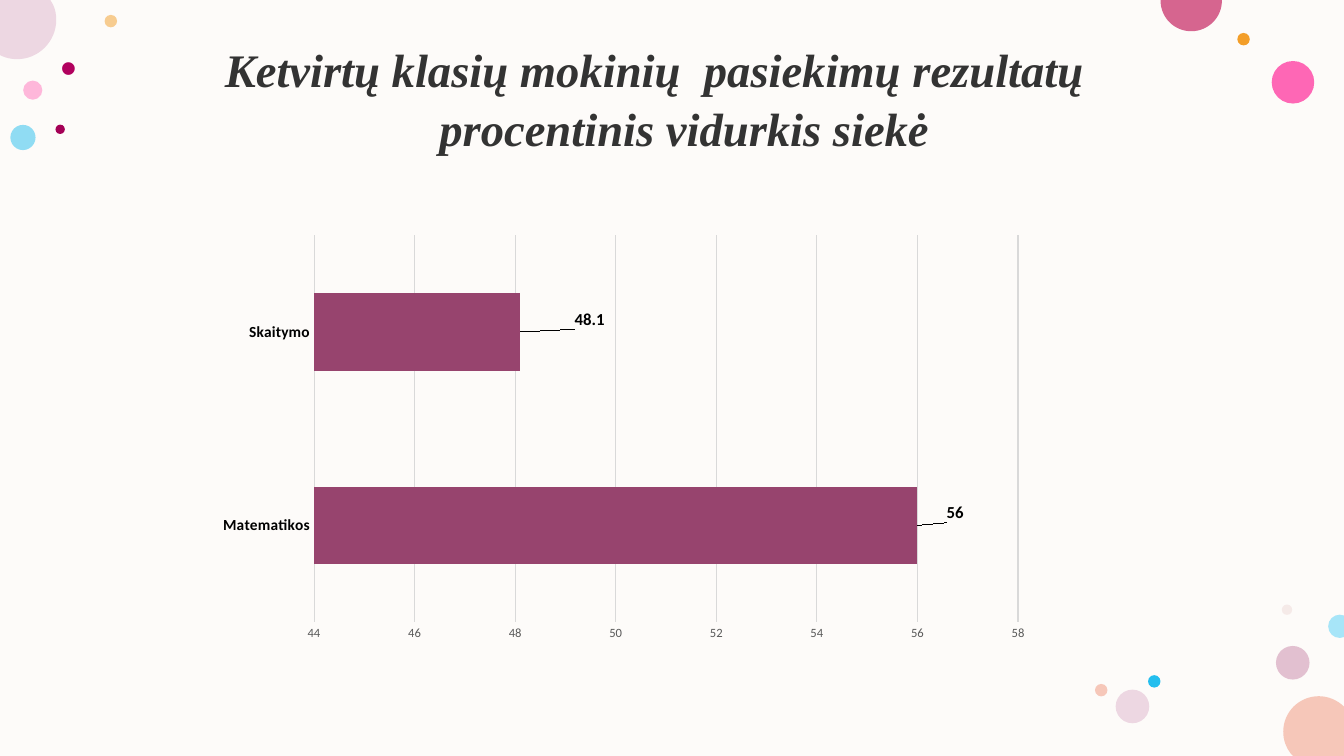
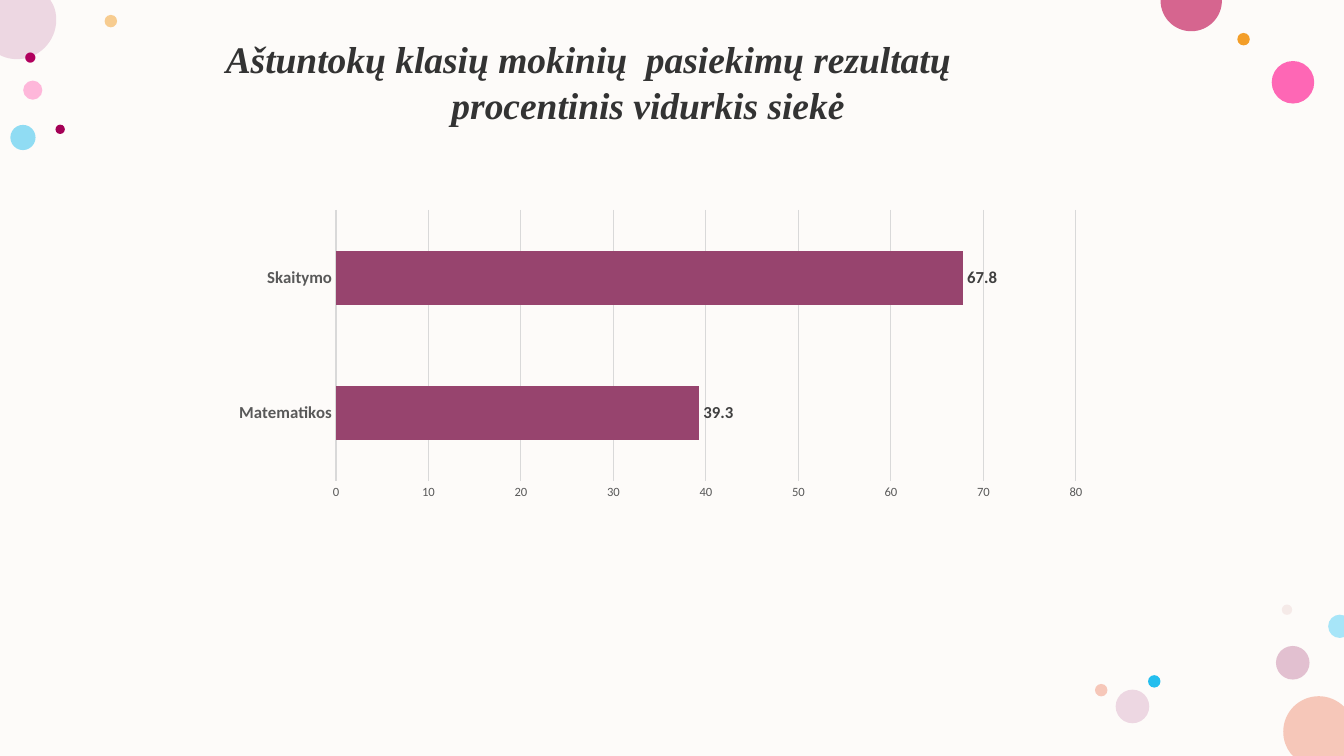
from lxml import etree
from pptx import Presentation
from pptx.chart.data import CategoryChartData
from pptx.dml.color import RGBColor
from pptx.enum import chart as ch, shapes, text
from pptx.oxml import parse_xml
from pptx.oxml.ns import nsdecls, qn
from pptx.util import Pt

WIDE, HIGH = 960, 540
PAPER, INK, BAR, GRID, AXIS, BULLET = "FDFBF9", "333333", "97446E", "D9D9D9", "595959", "B1005E"
SERIF, SANS = "Times New Roman", "Calibri"

# centre x, centre y, diameter, colour, opacity in percent
DOTS = [
    (23.4, 64.4, 13.7, "FF75BD", 50),
    (79.2, 15.1, 8.9, "F39E29", 50),
    (923.4, 473.4, 24, "C987A8", 50),
    (16.4, 98.2, 18, "24BEEE", 50),
    (923.6, 58.8, 30.4, "FF2F9C", 72),
    (888.3, 28, 8.9, "F39E29", 100),
    (919.3, 435.5, 7.4, "E3BEBE", 28),
    (824.5, 486.7, 8.9, "24BEEE", 100),
    (808.9, 504.6, 24, "EDD7E2", 100),
    (786.6, 493, 8.9, "F6C7B9", 100),
    (43, 92.4, 6.7, "A40056", 100),
]

# colour, start point, then lines (one point) and curves (three points)
EDGES = [
    ("F6C7B9", (942, 497.3), [
        [(949, 497.3), (955.2, 500.2), (960, 504.7)], [(960, 540)], [(923.6, 540)], [(922, 538.3)],
        [(918.5, 534), (916.6, 528.5), (916.6, 522.7)], [(916.6, 508.5), (928, 497.3), (942, 497.3)]]),
    ("EDD7E2", (0, 0), [
        [(36, 0)], [(38, 3.5)], [(39.5, 6.7), (40.2, 10.3), (40.2, 14.2)],
        [(40.2, 29.7), (27.6, 42.3), (12.2, 42.3)], [(8.2, 42.3), (4.6, 41.5), (1.2, 40)], [(0, 39.4)]]),
    ("D6658F", (829.1, 0), [
        [(872.8, 0)], [(872.8, 0.5)], [(872.8, 12.5), (863, 22.3), (850.9, 22.3)],
        [(838.8, 22.3), (829, 12.5), (829, 0.5)]]),
    ("A7E5F8", (957, 439.1), [
        [(960, 439.7)], [(960, 455.1)], [(957, 455.7)],
        [(952.4, 455.7), (948.7, 452), (948.7, 447.4)], [(948.7, 442.8), (952.4, 439.1), (957, 439.1)]]),
]

CATS = ["Matematikos", "Skaitymo"]
SLIDES = [
    dict(
        lines=["Ketvirtų klasių mokinių  pasiekimų rezultatų", "procentinis vidurkis siekė"],
        box=(36, 33.4, 906, 147), size=33.3, lead=0.8, indent=117.5,
        frame=(142.5, 162, 602, 302.4), plot=(224.3, 168, 502.9, 276.5),
        vals=[56, 48.1], scale=(44, 58, 2), cat=(11, "000000"), tag="000000",
        shift=[(0.03, -0.03), (0.06, -0.03)],
    ),
    dict(
        lines=["Aštuntokų klasių mokinių  pasiekimų rezultatų", "procentinis vidurkis siekė"],
        box=(10, 31, 906, 147), size=26.8, lead=0.7, indent=144.2,
        frame=(153.4, 146.2, 633, 216), plot=(240, 150, 528.6, 193.5),
        vals=[39.3, 67.8], scale=(0, 80, 10), cat=(12, AXIS), tag="404040",
        shift=[],
    ),
]


def rgb(code):
    return RGBColor.from_string(code)


def style(font, name, size, color, bold=False, italic=False):
    font.name, font.size, font.bold, font.italic = name, Pt(size), bold, italic
    font.color.rgb = rgb(color)


def paint(shape, color, alpha=100):
    shape.shadow.inherit = False
    shape.line.fill.background()
    shape.fill.solid()
    shape.fill.fore_color.rgb = rgb(color)
    if alpha < 100:
        tint = shape.fill._xPr.find(".//" + qn("a:srgbClr"))
        etree.SubElement(tint, qn("a:alpha")).set("val", str(alpha * 1000))


def add_dot(slide, x, y, size, color, alpha):
    r = size / 2
    oval = shapes.MSO_SHAPE.OVAL
    paint(slide.shapes.add_shape(oval, Pt(x - r), Pt(y - r), Pt(size), Pt(size)), color, alpha)


def add_edge(slide, color, start, legs):
    pen = slide.shapes.build_freeform(Pt(start[0]), Pt(start[1]))
    pen.add_line_segments([(Pt(x), Pt(y)) for leg in legs for x, y in leg], close=True)
    blob = pen.convert_to_shape()
    steps = iter(list(blob._element.iter(qn("a:lnTo"))))
    for leg in legs:
        group = [next(steps) for _ in leg]
        if len(leg) == 3:
            curve = etree.Element(qn("a:cubicBezTo"))
            group[0].addprevious(curve)
            for step in group:
                curve.append(step[0])
                step.getparent().remove(step)
    paint(blob, color)


def add_decor(slide):
    rect = shapes.MSO_SHAPE.RECTANGLE
    paint(slide.shapes.add_shape(rect, 0, 0, Pt(WIDE), Pt(HIGH)), PAPER)
    for dot in DOTS:
        add_dot(slide, *dot)
    for edge in EDGES:
        add_edge(slide, *edge)


def add_title(slide, item):
    frame = slide.shapes.add_textbox(*map(Pt, item["box"])).text_frame
    frame.word_wrap = True
    frame.text = "\n".join(item["lines"])
    for para in frame.paragraphs:
        para.line_spacing = item["lead"]
        para.space_before = Pt(10)
        style(para.runs[0].font, SERIF, item["size"], INK, True, True)
    first, last = frame.paragraphs
    last.alignment = text.PP_ALIGN.CENTER
    props = first._p.get_or_add_pPr()
    gap = Pt(item["indent"])
    props.set("marL", str(gap))
    props.set("indent", str(-gap))
    for bit in (f'<a:buClr {nsdecls("a")}><a:srgbClr val="{BULLET}"/></a:buClr>',
                f'<a:buFont {nsdecls("a")} typeface="Arial"/>',
                f'<a:buChar {nsdecls("a")} char="•"/>'):
        props.append(parse_xml(bit))


def layout(**parts):
    tags = "".join(f'<c:{key} val="{val}"/>' for key, val in parts.items())
    return parse_xml(f'<c:layout {nsdecls("c")}><c:manualLayout>{tags}</c:manualLayout></c:layout>')


def set_plot(chart, frame, plot):
    left, top, wide, high = frame
    x, y, w, h = plot
    area = chart._chartSpace.chart.plotArea
    for old in area.findall(qn("c:layout")):
        area.remove(old)
    area.insert(0, layout(layoutTarget="inner", xMode="edge", yMode="edge",
                          x=(x - left) / wide, y=(y - top) / high, w=w / wide, h=h / high))


def hide_leaders(tags):
    root = tags._element
    for old in root.findall(qn("c:showLeaderLines")):
        root.remove(old)
    root.append(parse_xml(
        f'<c:extLst {nsdecls("c")}><c:ext uri="{{CE6537A1-D6FC-4f65-9D91-7224C49458BB}}" '
        'xmlns:c15="http://schemas.microsoft.com/office/drawing/2012/chart">'
        '<c15:showLeaderLines val="0"/></c:ext></c:extLst>'))


def add_tags(bars, item):
    tags = bars.data_labels
    tags.show_value = True
    tags.position = ch.XL_LABEL_POSITION.OUTSIDE_END
    style(tags.font, SANS, 12, item["tag"], True)
    for k, (x, y) in enumerate(item["shift"]):
        label = bars.points[k].data_label
        label.position = ch.XL_LABEL_POSITION.OUTSIDE_END
        style(label.font, SANS, 12, item["tag"], True)
        label._dLbl.find(qn("c:idx")).addnext(layout(x=x, y=y))
    hide_leaders(tags)


def add_bars(slide, item):
    data = CategoryChartData()
    data.categories = CATS
    data.add_series("Series 1", item["vals"])
    chart = slide.shapes.add_chart(ch.XL_CHART_TYPE.BAR_CLUSTERED, *map(Pt, item["frame"]), data).chart
    chart.has_legend = chart.has_title = False
    style(chart.font, SANS, 10, "000000")
    set_plot(chart, item["frame"], item["plot"])

    plot = chart.plots[0]
    plot.gap_width, plot.vary_by_categories = 150, False
    bars = plot.series[0]
    bars.format.fill.solid()
    bars.format.fill.fore_color.rgb = rgb(BAR)
    add_tags(bars, item)

    cat, val = chart.category_axis, chart.value_axis
    for axis in (cat, val):
        axis.major_tick_mark = axis.minor_tick_mark = ch.XL_TICK_MARK.NONE
        axis.format.line.fill.background()
    style(cat.tick_labels.font, SANS, *item["cat"], True)
    style(val.tick_labels.font, SANS, 9, AXIS)
    val.minimum_scale, val.maximum_scale, val.major_unit = item["scale"]
    val.has_major_gridlines = True
    grid = val.major_gridlines.format.line
    grid.width = Pt(0.75)
    grid.color.rgb = rgb(GRID)


def main():
    deck = Presentation()
    deck.slide_width, deck.slide_height = Pt(WIDE), Pt(HIGH)
    for item in SLIDES:
        slide = deck.slides.add_slide(deck.slide_layouts[6])
        add_decor(slide)
        add_title(slide, item)
        add_bars(slide, item)
    deck.save("out.pptx")


if __name__ == "__main__":
    main()
